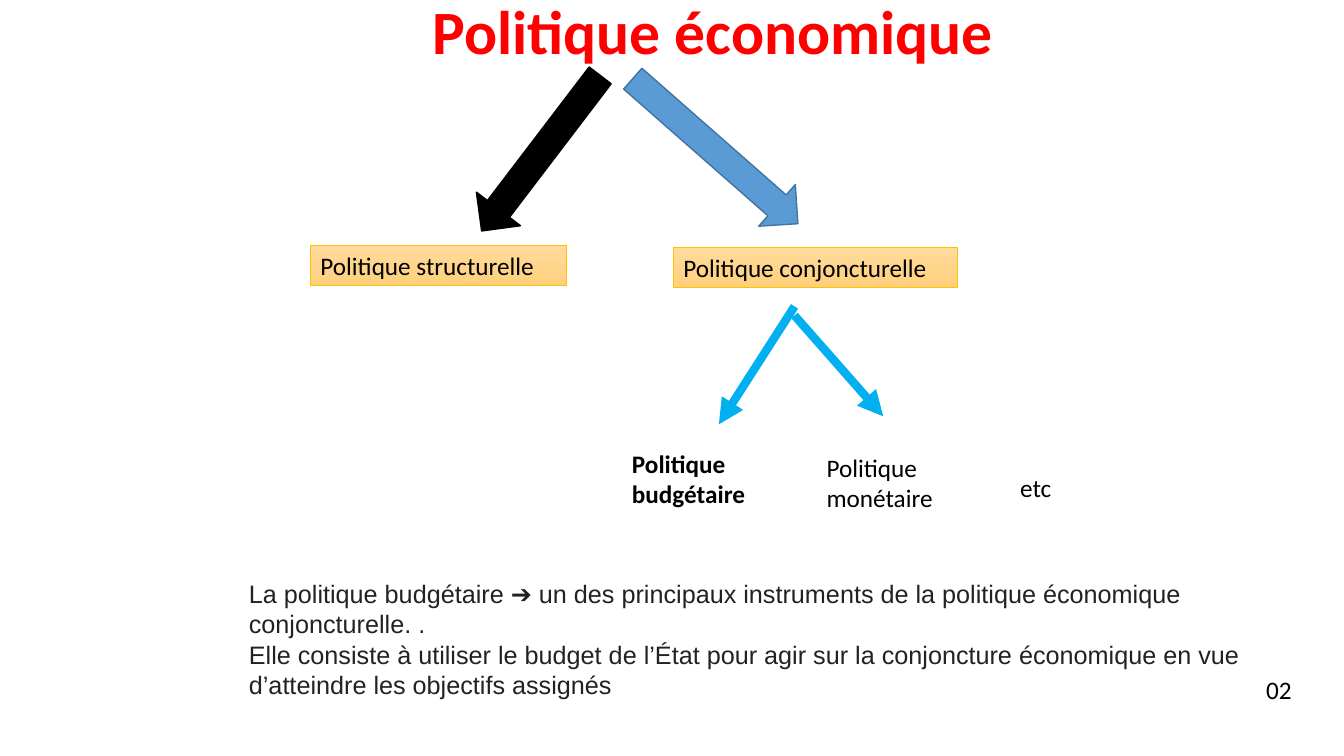
from dataclasses import dataclass

from pptx import Presentation
from pptx.dml.color import RGBColor
from pptx.enum.shapes import MSO_CONNECTOR, MSO_SHAPE
from pptx.enum.text import MSO_ANCHOR, MSO_AUTO_SIZE, PP_ALIGN
from pptx.oxml.ns import qn
from pptx.util import Inches, Pt
from lxml.etree import SubElement


@dataclass(frozen=True)
class Theme:
    red: str = "FF0000"
    black: str = "000000"
    gray: str = "222222"
    blue: str = "5B9BD5"
    navy: str = "43739E"
    sky: str = "00B0F0"
    gold: str = "FFC000"
    light: str = "FFDB9E"
    deep: str = "FFD07C"
    head: int = 44
    body: int = 18
    sans: str = "Calibri"
    prose: str = "Arial"


THEME = Theme()


def color(code):
    return RGBColor.from_string(code)


def place(box):
    return [Inches(n) for n in box]


def write(frame, text, tone=THEME.black, size=THEME.body, face=THEME.sans, bold=False):
    frame.text = text
    frame.word_wrap = True
    for para in frame.paragraphs:
        para.alignment = PP_ALIGN.LEFT
        for run in para.runs:
            font = run.font
            font.name, font.size, font.bold = face, Pt(size), bold
            font.color.rgb = color(tone)


def add_title(slide, box, text):
    title = slide.shapes.title
    title.left, title.top, title.width, title.height = place(box)
    frame = title.text_frame
    write(frame, text, THEME.red, THEME.head, bold=True)
    frame.vertical_anchor = MSO_ANCHOR.MIDDLE
    frame.auto_size = MSO_AUTO_SIZE.NONE
    frame.paragraphs[0].line_spacing = 0.9


def add_text(slide, box, text, **style):
    frame = slide.shapes.add_textbox(*place(box)).text_frame
    write(frame, text, **style)
    frame.auto_size = MSO_AUTO_SIZE.SHAPE_TO_FIT_TEXT


def add_arrow(slide, box, turn, fill, edge):
    arrow = slide.shapes.add_shape(MSO_SHAPE.DOWN_ARROW, *place(box))
    arrow.rotation = turn
    arrow.shadow.inherit = False
    arrow.fill.solid()
    arrow.fill.fore_color.rgb = color(fill)
    arrow.line.color.rgb = color(edge)
    arrow.line.width = Pt(1)


def add_label(slide, box, text):
    label = slide.shapes.add_shape(MSO_SHAPE.RECTANGLE, *place(box))
    label.shadow.inherit = False
    label.fill.gradient()
    label.fill.gradient_angle = 270
    for stop, tone in zip(label.fill.gradient_stops, (THEME.light, THEME.deep)):
        stop.color.rgb = color(tone)
    label.line.color.rgb = color(THEME.gold)
    label.line.width = Pt(0.5)
    frame = label.text_frame
    write(frame, text)
    frame.vertical_anchor = MSO_ANCHOR.TOP
    frame.auto_size = MSO_AUTO_SIZE.SHAPE_TO_FIT_TEXT


def add_link(slide, start, end):
    link = slide.shapes.add_connector(MSO_CONNECTOR.STRAIGHT, *place(start + end))
    link.line.color.rgb = color(THEME.sky)
    link.line.width = Pt(6)
    SubElement(link.line._get_or_add_ln(), qn("a:tailEnd"), type="triangle")
    SubElement(link._element.spPr, qn("a:effectLst"))


def add_split(slide, box):
    x, y, w, h = box
    add_arrow(slide, (x + 2.01, y, 0.55, 1.94), 37.3, THEME.black, THEME.black)
    add_arrow(slide, (x + 3.74, y - 0.14, 0.55, 2.18), 311.3, THEME.blue, THEME.navy)
    add_label(slide, (x, y + 1.88, 2.54, 0.4), "Politique structurelle")
    add_label(slide, (x + w - 2.82, y + h - 0.4, 2.82, 0.4), "Politique conjoncturelle")


def add_branch(slide, box):
    x, y, w, h = box
    add_link(slide, (x + 1.71, y), (x + 0.96, y + 1.17))
    add_link(slide, (x + 1.71, y + 0.09), (x + 2.59, y + 1.09))
    add_text(slide, (x, y + 1.36, 1.6, 0.71), "Politique budgétaire", bold=True)
    add_text(slide, (x + 1.93, y + h - 0.71, 1.6, 0.71), "Politique monétaire")
    add_text(slide, (x + w - 1.23, y + 1.6, 1.23, 0.4), "etc")


def add_notion(slide, box):
    text = "\n".join((
        "La politique budgétaire ➔ un des principaux instruments de la politique "
        "économique conjoncturelle. .",
        "Elle consiste à utiliser le budget de l’État pour agir sur la conjoncture "
        "économique en vue d’atteindre les objectifs assignés",
    ))
    add_text(slide, box, text, tone=THEME.gray, face=THEME.prose)


def main():
    deck = Presentation()
    deck.slide_width, deck.slide_height = Inches(13.33), Inches(7.5)
    slide = deck.slides.add_slide(deck.slide_layouts[5])
    add_title(slide, (4.19, -0.38, 11.5, 1.45), "Politique économique")
    add_split(slide, (3.08, 0.55, 6.42, 2.3))
    add_branch(slide, (6.17, 3.04, 5.08, 2.11))
    add_notion(slide, (2.37, 5.69, 10.28, 1.31))
    add_text(slide, (12.46, 6.64, 0.58, 0.4), "02")
    deck.save("out.pptx")


if __name__ == "__main__":
    main()
